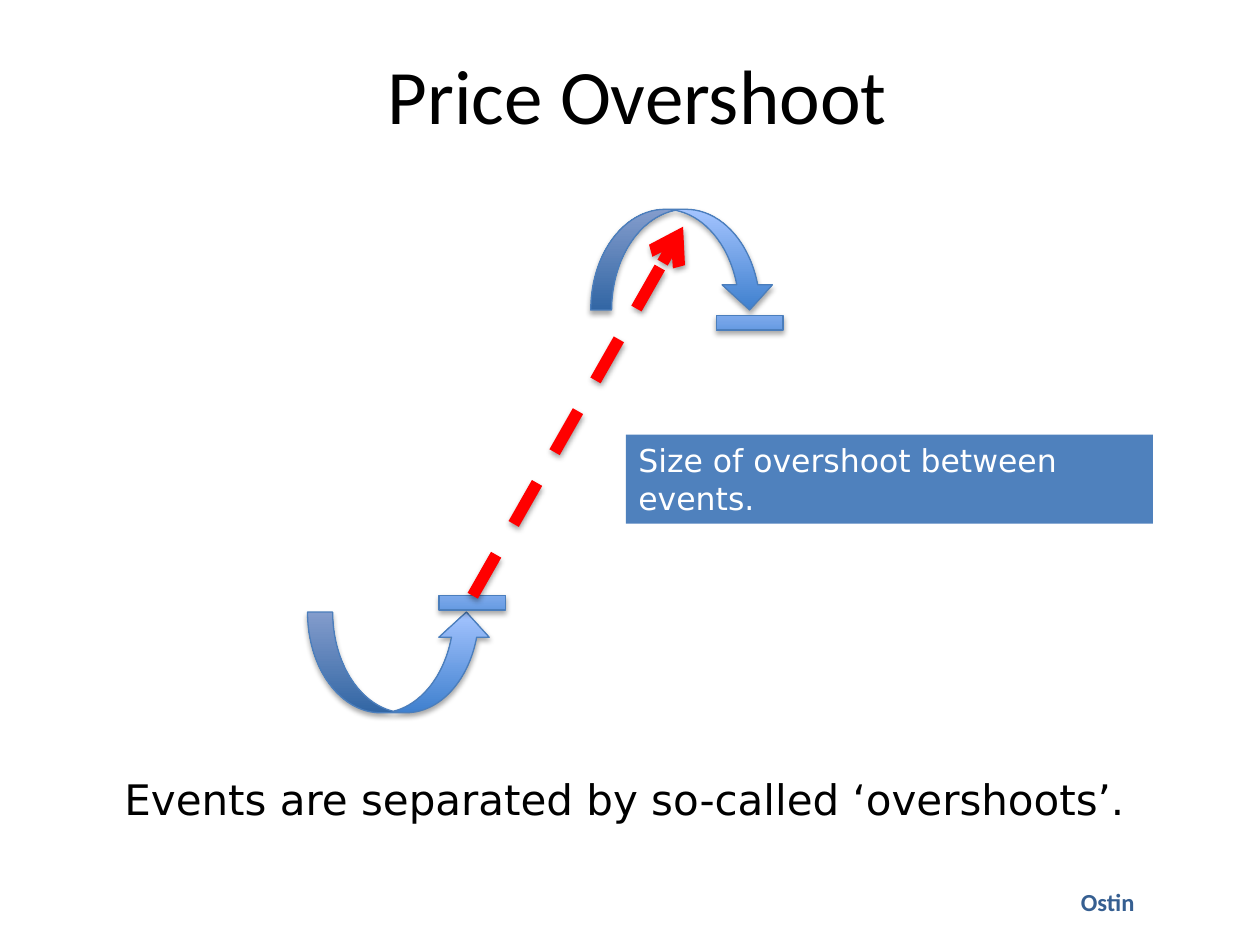
from dataclasses import dataclass

from lxml import etree
from pptx import Presentation
from pptx.dml.color import RGBColor
from pptx.enum.dml import MSO_LINE
from pptx.enum.shapes import MSO_CONNECTOR, MSO_SHAPE
from pptx.enum.text import MSO_ANCHOR, MSO_AUTO_SIZE, PP_ALIGN
from pptx.oxml.ns import qn
from pptx.util import Cm, Pt

UP_ARROW = MSO_SHAPE.CURVED_UP_ARROW
DOWN_ARROW = MSO_SHAPE.CURVED_DOWN_ARROW
MINUS = MSO_SHAPE.MATH_MINUS
STRAIGHT = MSO_CONNECTOR.STRAIGHT
DASH = MSO_LINE.DASH
CENTER = PP_ALIGN.CENTER
MIDDLE = MSO_ANCHOR.MIDDLE
GROW = MSO_AUTO_SIZE.SHAPE_TO_FIT_TEXT


@dataclass(frozen=True)
class Theme:
    heading_font: str = "Calibri"
    body_font: str = "DejaVu Sans"
    black: str = "000000"
    white: str = "FFFFFF"
    brand: str = "365F91"
    label_fill: str = "4F81BD"
    gradient: tuple[str, str] = ("3F80CE", "A4C4FF")
    outline: str = "4B7EBC"
    overshoot: str = "FF0000"
    title_size: int = 44
    caption_size: int = 24
    label_size: int = 18
    brand_size: int = 14


@dataclass(frozen=True)
class Marker:
    kind: int
    left: float
    top: float
    width: float
    height: float
    adjustments: tuple[float, ...] = ()


@dataclass(frozen=True)
class Label:
    text: str
    left: float
    top: float
    width: float
    height: float
    format: dict
    fill: str | None = None
    wrap: bool = True
    inset: float | None = None


THEME = Theme()

# Turning points of the price, each with its event level
MARKERS = [
    Marker(UP_ARROW, 6.2, 12.34, 3.71, 2.03),
    Marker(DOWN_ARROW, 11.91, 4.22, 3.71, 2.03, (0.207, 0.5, 0.25)),
    Marker(MINUS, 14.2, 5.89, 1.83, 1.24),
    Marker(MINUS, 8.61, 11.53, 1.83, 1.24),
]


def font_format(name: str, size: int, bold: bool = False) -> dict:
    return {"name": name, "size": Pt(size), "bold": bold}


def style_text(para, values: dict, color: str) -> None:
    for name, value in values.items():
        setattr(para.font, name, value)
    para.font.color.rgb = RGBColor.from_string(color)


def add_shadow(item, opacity: int, distance: float) -> None:
    """Add a soft shadow straight below; call after fill and line are set."""
    properties = item._element.spPr
    for old in properties.findall(qn("a:effectLst")):
        properties.remove(old)
    effects = etree.SubElement(properties, qn("a:effectLst"))
    shadow = etree.SubElement(
        effects, qn("a:outerShdw"), blurRad=str(Pt(3.1)), dist=str(Pt(distance)),
        dir="5400000", rotWithShape="0")
    color = etree.SubElement(shadow, qn("a:srgbClr"), val=THEME.black)
    etree.SubElement(color, qn("a:alpha"), val=str(opacity * 1000))


def add_marker(page, marker: Marker) -> None:
    shape = page.shapes.add_shape(
        marker.kind, Cm(marker.left), Cm(marker.top), Cm(marker.width), Cm(marker.height))
    for index, value in enumerate(marker.adjustments):
        shape.adjustments[index] = value
    shape.fill.gradient()
    shape.fill.gradient_angle = 90
    for stop, color in zip(shape.fill.gradient_stops, THEME.gradient):
        stop.color.rgb = RGBColor.from_string(color)
    shape.line.color.rgb = RGBColor.from_string(THEME.outline)
    shape.line.width = Pt(0.75)
    add_shadow(shape, 35, 1.8)


def add_label(page, label: Label, color: str) -> None:
    box = page.shapes.add_textbox(
        Cm(label.left), Cm(label.top), Cm(label.width), Cm(label.height))
    frame = box.text_frame
    frame.word_wrap = label.wrap
    if label.inset is None:
        frame.auto_size = GROW
    else:
        for side in ("left", "top", "right", "bottom"):
            setattr(frame, f"margin_{side}", Cm(label.inset))
    if label.fill:
        box.fill.solid()
        box.fill.fore_color.rgb = RGBColor.from_string(label.fill)
    para = frame.paragraphs[0]
    para.text = label.text
    style_text(para, label.format, color)


def add_overshoot_arrow(page) -> None:
    arrow = page.shapes.add_connector(STRAIGHT, Cm(9.53), Cm(12.01), Cm(13.77), Cm(4.57))
    arrow.line.color.rgb = RGBColor.from_string(THEME.overshoot)
    arrow.line.width = Pt(6.75)
    arrow.line.dash_style = DASH
    etree.SubElement(arrow.line._get_or_add_ln(), qn("a:tailEnd"), type="arrow")
    add_shadow(arrow, 38, 1.6)


def set_title(page, text: str) -> None:
    title = page.shapes.title
    place = {"left": Cm(1.42), "top": Cm(0.3), "width": Cm(22.86), "height": Cm(3.18)}
    for name, value in place.items():
        setattr(title, name, value)
    title.text_frame.vertical_anchor = MIDDLE
    para = title.text_frame.paragraphs[0]
    para.text = text
    para.alignment = CENTER
    style_text(para, font_format(THEME.heading_font, THEME.title_size), THEME.black)


def main() -> None:
    deck = Presentation()
    deck.slide_width, deck.slide_height = Cm(25.4), Cm(19.05)
    page = deck.slides.add_slide(deck.slide_layouts[5])

    # Brand line and title
    add_label(page, Label(
        "Ostin", 21.54, 17.63, 3.05, 1.04,
        font_format(THEME.heading_font, THEME.brand_size, True), inset=0.25), THEME.brand)
    set_title(page, "Price Overshoot")

    # Diagram
    for marker in MARKERS:
        add_marker(page, marker)
    add_overshoot_arrow(page)

    # Explanations
    add_label(page, Label(
        "Size of overshoot between events.", 12.62, 8.76, 10.62, 1.8,
        font_format(THEME.body_font, THEME.label_size), fill=THEME.label_fill), THEME.white)
    add_label(page, Label(
        "Events are separated by so-called ‘overshoots’.", 2.26, 15.47, 20.75, 1.27,
        font_format(THEME.body_font, THEME.caption_size), wrap=False), THEME.black)

    deck.save("out.pptx")


if __name__ == "__main__":
    main()
